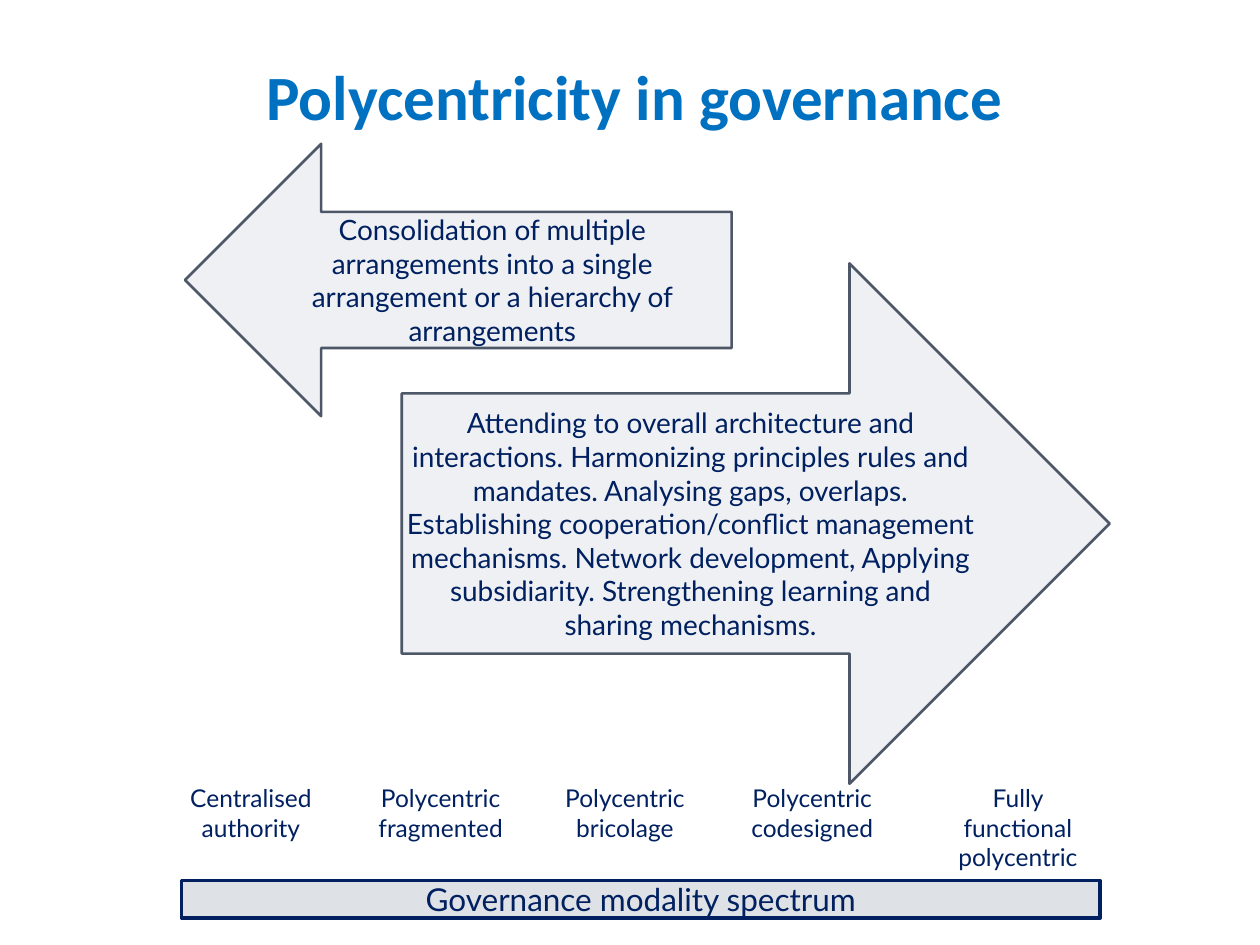
import dataclasses

import pptx
import pptx.dml.color
import pptx.enum.shapes
import pptx.enum.text
import pptx.util

Cm = pptx.util.Cm
Pt = pptx.util.Pt
RGB = pptx.dml.color.RGBColor.from_string
SHAPE = pptx.enum.shapes.MSO_SHAPE
ANCHOR = pptx.enum.text.MSO_ANCHOR


@dataclasses.dataclass(frozen=True)
class Theme:
    """Colours, fonts and type sizes of the slide."""
    title: str = "0070C0"
    ink: str = "002060"
    arrow_fill: str = "EEF0F3"
    arrow_line: str = "4E5768"
    bar_fill: str = "DEE1E6"
    title_font: str = "Calibri"
    body_font: str = "Lato"
    title_size: int = 36
    bar_size: int = 18
    arrow_size: int = 16
    label_size: int = 14


@dataclasses.dataclass(frozen=True)
class Box:
    """A region of the slide in centimetres."""
    left: float
    top: float
    width: float
    height: float

    def inner(self, left, top, width, height):
        """Return a box placed relative to this one."""
        return Box(self.left + left, self.top + top, width, height)

    def lengths(self):
        """Return left, top, width and height as slide lengths."""
        return [Cm(n) for n in (self.left, self.top, self.width, self.height)]


THEME = Theme()

MODALITIES = [
    ("Centralised authority", 0, 3.76, 1.45),
    ("Polycentric fragmented", 3.98, 3.45, 1.45),
    ("Polycentric bricolage", 7.92, 3, 1.45),
    ("Polycentric codesigned", 11.58, 3.23, 1.45),
    ("Fully functional polycentric", 15.46, 3.76, 2.06),
]

CONSOLIDATION = (
    "Consolidation of multiple arrangements into a single arrangement "
    "or a hierarchy of arrangements"
)
COORDINATION = (
    "Attending to overall architecture and interactions. Harmonizing "
    "principles rules and mandates. Analysing gaps, overlaps. Establishing "
    "cooperation/conflict management mechanisms. Network development, "
    "Applying subsidiarity. Strengthening learning and sharing mechanisms."
)


def write(frame, text, size, color=THEME.ink, font=THEME.body_font, bold=False):
    """Fill a text frame with one centred paragraph."""
    frame.word_wrap = True
    line = frame.paragraphs[0]
    line.text = text
    line.alignment = pptx.enum.text.PP_ALIGN.CENTER
    line.font.size = Pt(size)
    line.font.name = font
    line.font.bold = bold
    line.font.color.rgb = RGB(color)


def add_panel(slide, box, kind, fill, outline, weight, text, size):
    """Add a filled, outlined shape with centred text."""
    panel = slide.shapes.add_shape(kind, *box.lengths())
    panel.shadow.inherit = False
    panel.fill.solid()
    panel.fill.fore_color.rgb = RGB(fill)
    panel.line.color.rgb = RGB(outline)
    panel.line.width = Pt(weight)
    panel.text_frame.vertical_anchor = ANCHOR.MIDDLE
    write(panel.text_frame, text, size)
    return panel


def add_title(slide, box):
    """Add the slide title."""
    title = slide.shapes.add_textbox(*box.lengths())
    write(title.text_frame, "Polycentricity in governance", THEME.title_size,
          THEME.title, THEME.title_font, bold=True)


def add_arrows(slide, box):
    """Add the two opposing governance arrows."""
    directions = [
        (SHAPE.RIGHT_ARROW, box.inner(4.37, 2.41, 14.27, 10.49), COORDINATION),
        (SHAPE.LEFT_ARROW, box.inner(0, 0, 11.02, 5.49), CONSOLIDATION),
    ]
    for kind, place, text in directions:
        arrow = add_panel(slide, place, kind, THEME.arrow_fill,
                          THEME.arrow_line, 1.5, text, THEME.arrow_size)
        frame = arrow.text_frame
        frame.margin_left = frame.margin_right = Cm(0.1)


def add_spectrum(slide, box):
    """Add the modality labels and the spectrum bar below them."""
    for text, left, width, height in MODALITIES:
        label = slide.shapes.add_textbox(*box.inner(left, 0, width, height).lengths())
        write(label.text_frame, text, THEME.label_size)
    add_panel(slide, box.inner(0.48, 2.08, 18.52, 0.76), SHAPE.RECTANGLE,
              THEME.bar_fill, THEME.ink, 2, "Governance modality spectrum",
              THEME.bar_size)


def main():
    """Build and save the slide."""
    deck = pptx.Presentation()
    deck.slide_width, deck.slide_height = Cm(25.4), Cm(19.05)
    slide = deck.slides.add_slide(deck.slide_layouts[6])
    add_spectrum(slide, Box(3.18, 15.67, 19.22, 2.84))
    add_arrows(slide, Box(3.73, 2.9, 18.64, 12.9))
    add_title(slide, Box(0, 1.04, 25.58, 2.18))
    deck.save("out.pptx")


if __name__ == "__main__":
    main()
